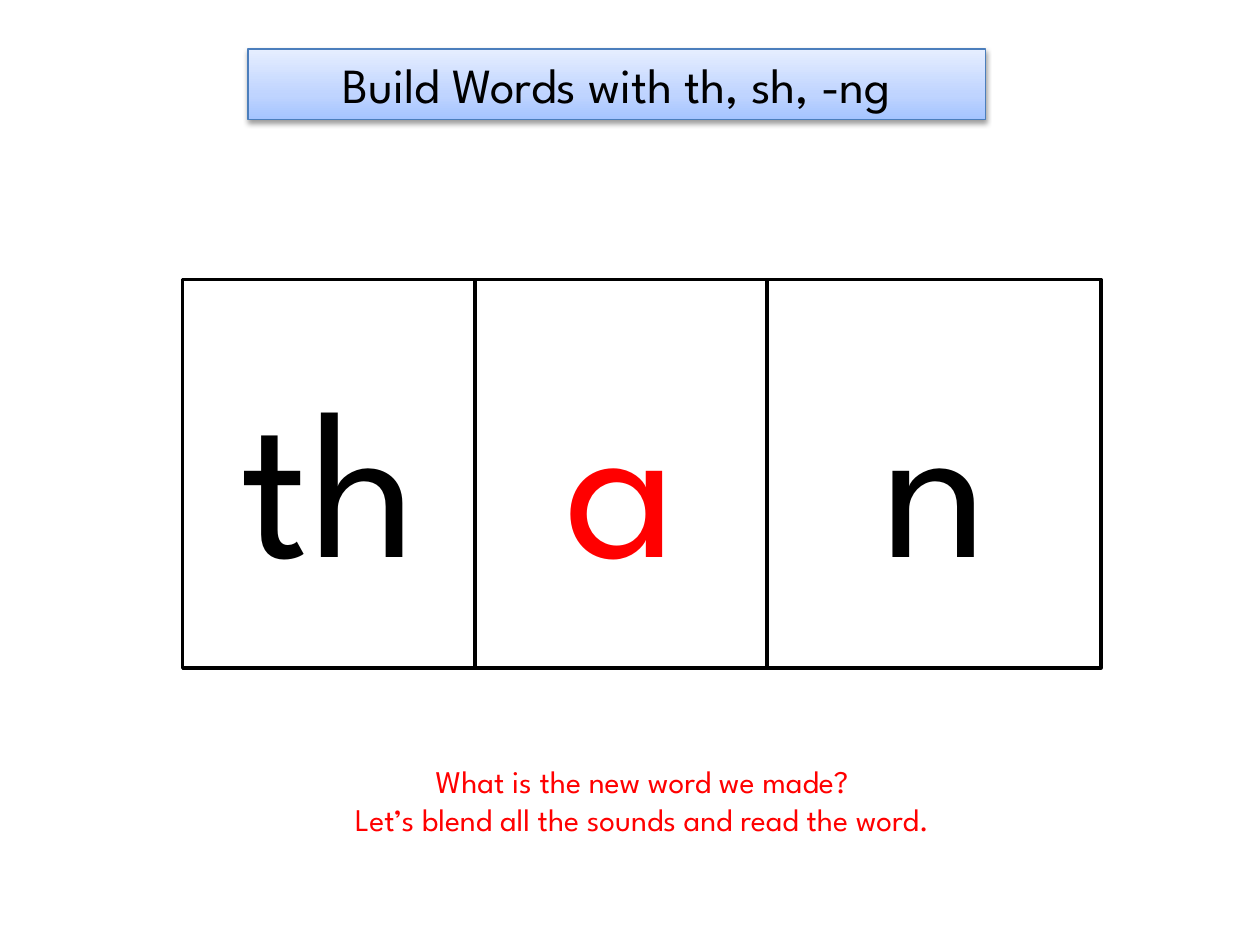
import copy

import pptx
import pptx.dml.color
import pptx.enum.shapes
import pptx.enum.text
import pptx.oxml
import pptx.oxml.ns
import pptx.util

Pt = pptx.util.Pt
FONT = "League Spartan"
BLACK, RED, WHITE = "000000", "FF0000", "FFFFFF"
BANNER_STOPS = [(0, "A4C4FF"), (0.35, "BFD4FF"), (1, "E6EEFF")]
BANNER_SHADOW = (
    f'<a:effectLst {pptx.oxml.ns.nsdecls("a")}>'
    f'<a:outerShdw blurRad="{Pt(3.1)}" dist="{Pt(1.6)}" dir="5400000" rotWithShape="0">'
    '<a:srgbClr val="000000"><a:alpha val="38000"/></a:srgbClr>'
    '</a:outerShdw></a:effectLst>'
)


def color(hex_value):
    return pptx.dml.color.RGBColor.from_string(hex_value)


def write(shape, lines, size, hex_value, anchor):
    frame = shape.text_frame
    frame_format = {"word_wrap": True, "vertical_anchor": anchor,
                    "auto_size": pptx.enum.text.MSO_AUTO_SIZE.NONE}
    for name, value in frame_format.items():
        setattr(frame, name, value)
    frame.text = "\n".join(lines)
    for paragraph in frame.paragraphs:
        paragraph.alignment = pptx.enum.text.PP_ALIGN.CENTER
        for name, value in {"name": FONT, "size": Pt(size)}.items():
            setattr(paragraph.runs[0].font, name, value)
        paragraph.runs[0].font.color.rgb = color(hex_value)


def outline(shape, hex_value, width):
    shape.line.color.rgb = color(hex_value)
    shape.line.width = Pt(width)


def add_banner(slide, left, top, width, height):
    banner = slide.shapes.title
    box = {"left": left, "top": top, "width": width, "height": height}
    for name, value in box.items():
        setattr(banner, name, Pt(value))
    write(banner, ["Build Words with th, sh, -ng"], 28, BLACK,
          pptx.enum.text.MSO_ANCHOR.MIDDLE)

    banner.fill.gradient()
    banner.fill.gradient_angle = 90
    properties = banner.element.spPr
    stop_list = properties.find(".//" + pptx.oxml.ns.qn("a:gsLst"))
    stop_list.append(copy.deepcopy(stop_list[0]))
    for stop, (position, hex_value) in zip(banner.fill.gradient_stops, BANNER_STOPS):
        stop.position = position
        stop.color.rgb = color(hex_value)
    outline(banner, "4B7EBC", 0.75)
    properties.append(pptx.oxml.parse_xml(BANNER_SHADOW))


def add_sound_cards(slide, left, top, height, sounds):
    """Place the cards side by side, each given as sound, colour and width."""
    for sound, hex_value, width in sounds:
        card = slide.shapes.add_shape(pptx.enum.shapes.MSO_SHAPE.RECTANGLE,
                                      Pt(left), Pt(top), Pt(width), Pt(height))
        card.shadow.inherit = False
        card.fill.solid()
        card.fill.fore_color.rgb = color(WHITE)
        outline(card, BLACK, 2)
        write(card, [sound], 120, hex_value, pptx.enum.text.MSO_ANCHOR.MIDDLE)
        left += width


def add_question(slide, left, top, width, height):
    question = slide.shapes.add_textbox(Pt(left), Pt(top), Pt(width), Pt(height))
    lines = ["What is the new word we made?",
             "Let’s blend all the sounds and read the word."]
    write(question, lines, 18, RED, pptx.enum.text.MSO_ANCHOR.TOP)


def main():
    deck = pptx.Presentation()
    deck.slide_width, deck.slide_height = Pt(720), Pt(540)
    slide = deck.slides.add_slide(deck.slide_layouts.get_by_name("Title Only"))
    add_banner(slide, 141.8, 28, 421.2, 40.3)
    add_sound_cards(slide, 104.4, 159.8, 221.8,
                    [("th", BLACK, 167), ("a", RED, 167), ("n", BLACK, 190.8)])
    add_question(slide, 116, 432, 502, 51)
    deck.save("out.pptx")


if __name__ == "__main__":
    main()
